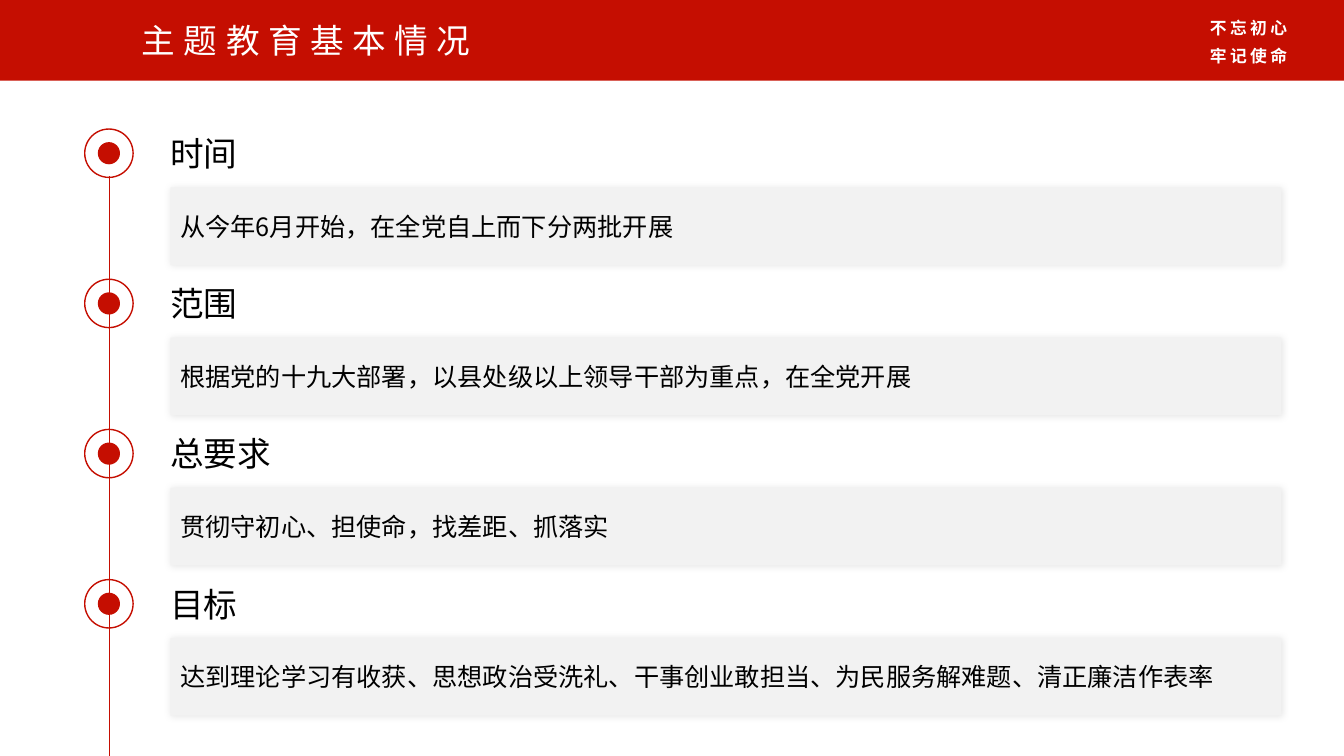
"""Build the overview slide: a red title band and a four-step timeline."""
from lxml import etree
from pptx import Presentation
from pptx.dml.color import RGBColor
from pptx.enum import shapes, text
from pptx.oxml import ns, parse_xml
from pptx.util import Inches, Pt

RED, WHITE, BLACK, GREY = "C50E01", "FFFFFF", "000000", "F2F2F2"
FACE = "Noto Sans CJK SC"
PITCH = 1.49
STEPS = [
    ("时间", "从今年6月开始，在全党自上而下分两批开展"),
    ("范围", "根据党的十九大部署，以县处级以上领导干部为重点，在全党开展"),
    ("总要求", "贯彻守初心、担使命，找差距、抓落实"),
    ("目标", "达到理论学习有收获、思想政治受洗礼、干事创业敢担当、"
             "为民服务解难题、清正廉洁作表率"),
]
SHADOW = (
    f'<a:outerShdw {ns.nsdecls("a")} blurRad="63500" dist="0" dir="0" '
    'algn="ctr" rotWithShape="0"><a:srgbClr val="000000">'
    '<a:alpha val="10000"/></a:srgbClr></a:outerShdw>'
)


def rgb(code):
    """Turn a hex string into a colour."""
    return RGBColor.from_string(code)


def apply(item, values):
    """Set every attribute named in a dict."""
    for name, value in values.items():
        setattr(item, name, value)


def write(para, words, size, color=BLACK, gap=0, bold=False):
    """Add one formatted run to a paragraph."""
    run = para.add_run()
    run.text = words
    apply(run.font, {"size": Pt(size), "name": FACE, "bold": bold})
    run.font.color.rgb = rgb(color)
    props = run._r.get_or_add_rPr()
    props.set("spc", str(int(gap * 100)))
    etree.SubElement(props, ns.qn("a:ea"), typeface=FACE)


def shape(tree, kind, box, fill=None, line=None):
    """Add a preset shape with an optional fill and outline."""
    item = tree.add_shape(kind, *map(Inches, box))
    item.shadow.inherit = False
    if fill:
        item.fill.solid()
        item.fill.fore_color.rgb = rgb(fill)
    else:
        item.fill.background()
    if line:
        item.line.color.rgb = rgb(line)
        item.line.width = Pt(1)
    else:
        item.line.fill.background()
    return item


def label(tree, box, words, color=BLACK, gap=0):
    """Add a large one-line text box."""
    frame = tree.add_textbox(*map(Inches, box)).text_frame
    apply(frame, {"word_wrap": True,
                  "auto_size": text.MSO_AUTO_SIZE.SHAPE_TO_FIT_TEXT})
    write(frame.paragraphs[0], words, 24, color, gap)


def motto(tree):
    """Add the two-line slogan at the right of the band."""
    frame = tree.add_textbox(*map(Inches, (12, 0.1, 0.95, 0.56))).text_frame
    apply(frame, {"word_wrap": True, "margin_left": 0, "margin_right": 0,
                  "margin_top": 0, "margin_bottom": 0})
    for para, words in zip((frame.paragraphs[0], frame.add_paragraph()),
                           ("不忘初心", "牢记使命")):
        para.line_spacing = Pt(20)
        write(para, words, 12, WHITE, 2.4, True)


def rail(tree):
    """Add the vertical timeline line."""
    ends = map(Inches, (1.08, 1.75, 1.08, 7.5))
    line = tree.add_connector(shapes.MSO_CONNECTOR.STRAIGHT, *ends)
    line.line.color.rgb = rgb(RED)
    line.line.width = Pt(0.5)
    etree.SubElement(line._element.spPr, ns.qn("a:effectLst"))


def card(tree, top, words):
    """Add a grey shadowed panel with body text."""
    item = shape(tree, shapes.MSO_SHAPE.RECTANGLE,
                 (1.69, top, 11.02, 0.77), GREY)
    item._element.spPr.find(ns.qn("a:effectLst")).append(parse_xml(SHADOW))
    frame = item.text_frame
    apply(frame, {"word_wrap": True,
                  "vertical_anchor": text.MSO_ANCHOR.MIDDLE})
    para = frame.paragraphs[0]
    para.alignment = text.PP_ALIGN.LEFT
    write(para, words, 18)


def step(tree, top, head, body):
    """Add one timeline step: marker, heading and panel."""
    mark = tree.add_group_shape().shapes
    oval = shapes.MSO_SHAPE.OVAL
    shape(mark, oval, (0.84, top, 0.48, 0.48), line=RED)
    shape(mark, oval, (0.97, top + 0.13, 0.22, 0.22), RED)
    label(tree, (1.59, top - 0.01, 0.67 + 0.26 * len(head), 0.5), head)
    card(tree, top + 0.58, body)


def main():
    """Build and save the slide."""
    deck = Presentation()
    apply(deck, {"slide_width": Inches(13.33), "slide_height": Inches(7.5)})
    tree = deck.slides.add_slide(deck.slide_layouts[6]).shapes
    shape(tree, shapes.MSO_SHAPE.RECTANGLE, (0, 0, 13.33, 0.8), RED)
    label(tree, (1.31, 0.15, 5.01, 0.5), "主题教育基本情况", WHITE, 6)
    motto(tree)
    rail(tree)
    for row, (head, body) in enumerate(STEPS):
        step(tree, 1.28 + row * PITCH, head, body)
    deck.save("out.pptx")


if __name__ == "__main__":
    main()
